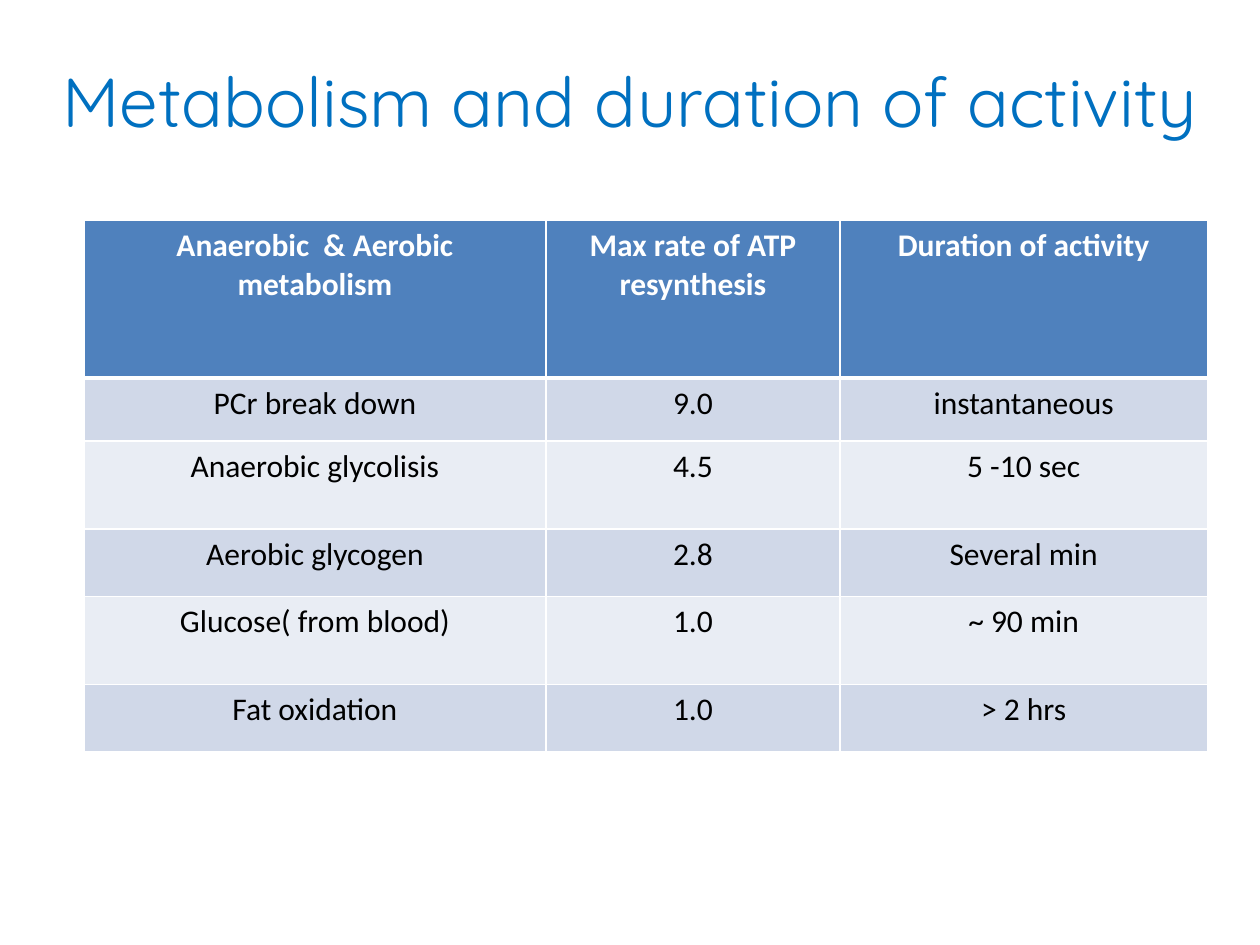
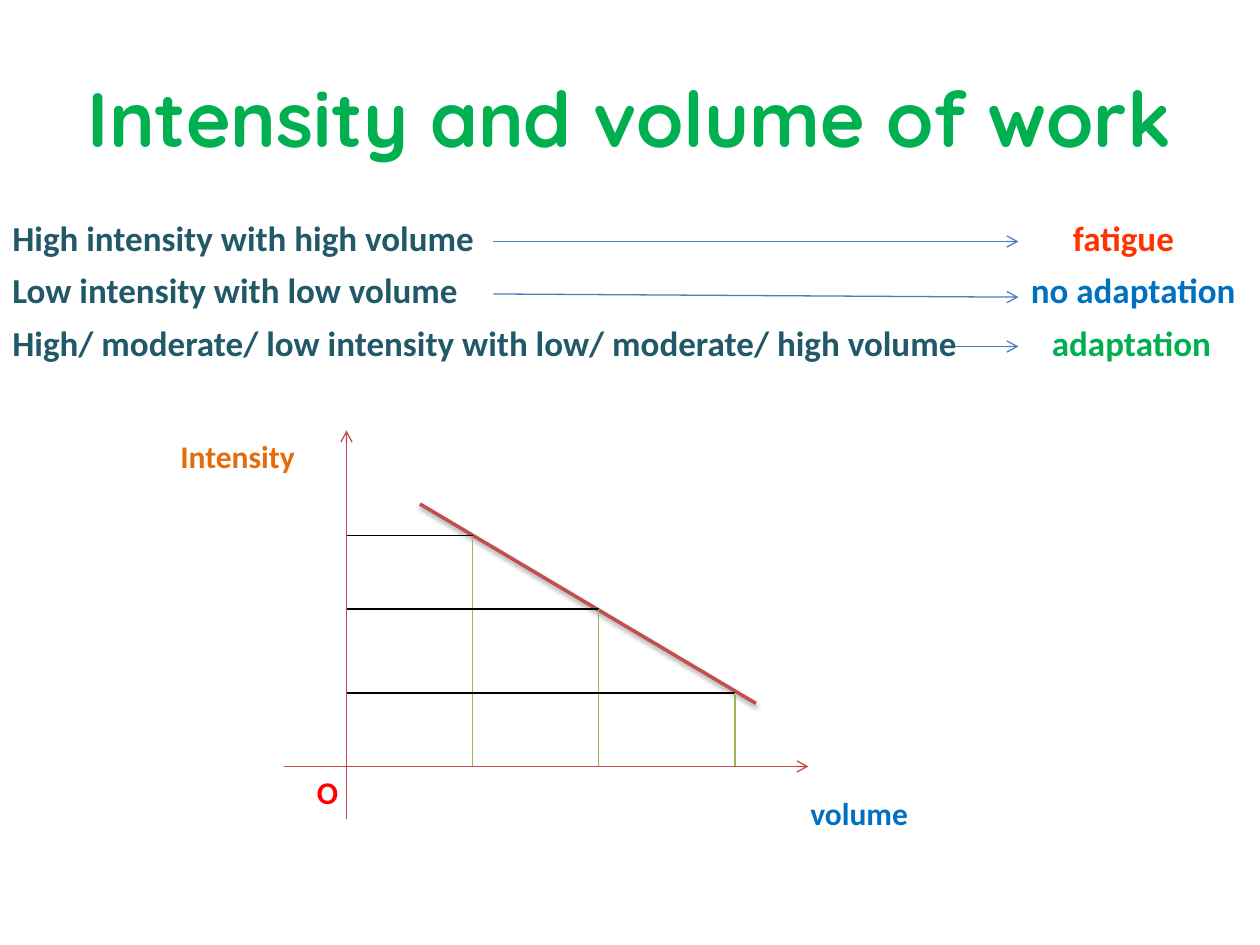
from collections import namedtuple

from lxml import etree
from pptx import Presentation
from pptx.dml.color import RGBColor
from pptx.enum import shapes, text
from pptx.oxml import ns
from pptx import util as u

CELL = u.Inches(1) / 12
TITLE_FONT, BODY_FONT = "Quicksand", "Calibri"
WHITE = RGBColor(0xFF, 0xFF, 0xFF)
BLACK = RGBColor(0x00, 0x00, 0x00)
BLUE = RGBColor(0x00, 0x70, 0xC0)
GREEN = RGBColor(0x00, 0xB0, 0x50)
TEAL = RGBColor(0x21, 0x59, 0x68)
ORANGE_RED = RGBColor(0xFF, 0x33, 0x00)
RED = RGBColor(0xFF, 0x00, 0x00)
ORANGE = RGBColor(0xE4, 0x6C, 0x0A)
HEADER_BLUE = RGBColor(0x4F, 0x81, 0xBD)
BAND_DARK = RGBColor(0xD0, 0xD8, 0xE8)
BAND_LIGHT = RGBColor(0xE9, 0xED, 0xF4)
ARROW_BLUE = RGBColor(0x4B, 0x7E, 0xBC)
AXIS_RED = RGBColor(0xBF, 0x4C, 0x48)
TREND_RED = RGBColor(0xC0, 0x50, 0x4D)
DROP_GREEN = RGBColor(0x98, 0xB9, 0x55)

Box = namedtuple("Box", "left top width height")

METABOLISM = [
    ("Anaerobic  & Aerobic metabolism", "Max rate of ATP resynthesis", "Duration of activity"),
    ("PCr break down", "9.0", "instantaneous"),
    ("Anaerobic glycolisis", "4.5", "5 -10 sec"),
    ("Aerobic glycogen", "2.8", "Several min"),
    ("Glucose( from blood)", "1.0", "~ 90 min"),
    ("Fat oxidation", "1.0", "> 2 hrs"),
]
METABOLISM_COLUMNS = (44, 28, 35)
METABOLISM_ROWS = (15, 6, 8.4, 6.4, 8.4, 6.4)

Outcome = namedtuple("Outcome", "work work_width arrow_start arrow_drop verdict verdict_left verdict_width color")
OUTCOMES = [
    Outcome("High intensity with high volume", 47.5, 47, 0, "fatigue", 101, 12, ORANGE_RED),
    Outcome("Low intensity with low volume", 47.5, 47, 0.3, "no adaptation", 97, 23, BLUE),
    Outcome("High/ moderate/ low intensity with low/ moderate/ high volume", 95, 91, 0,
            "adaptation", 99, 18, GREEN),
]


def cells(*counts):
    return [round(count * CELL) for count in counts]


def write(frame, words, size=18, color=BLACK, bold=False, font=BODY_FONT, align=text.PP_ALIGN.LEFT):
    paragraph = frame.paragraphs[0]
    paragraph.alignment = align
    run = paragraph.add_run()
    run.text = words
    run.font.name, run.font.size, run.font.bold = font, u.Pt(size), bold
    run.font.color.rgb = color


def add_label(slide, box, words, wrap=True, **style):
    frame = slide.shapes.add_textbox(*cells(*box)).text_frame
    frame.word_wrap = wrap
    write(frame, words, bold=True, **style)


def add_title(slide, box, words, **style):
    title = slide.shapes.title
    title.left, title.top, title.width, title.height = cells(*box)
    title.text_frame.auto_size = text.MSO_AUTO_SIZE.NONE
    title.text_frame.vertical_anchor = text.MSO_ANCHOR.MIDDLE
    write(title.text_frame, words, font=TITLE_FONT, align=text.PP_ALIGN.CENTER, **style)


def add_line(slide, start, end, color, width=0.75, arrow=False, shadow=False):
    line = slide.shapes.add_connector(shapes.MSO_CONNECTOR.STRAIGHT, *cells(*start, *end))
    line.line.color.rgb = color
    line.line.width = u.Pt(width)
    if arrow:
        etree.SubElement(line.line._get_or_add_ln(), ns.qn("a:tailEnd"), type="arrow")
    effects = etree.SubElement(line._element.spPr, ns.qn("a:effectLst"))
    if shadow:
        cast = etree.SubElement(effects, ns.qn("a:outerShdw"), blurRad=str(u.Pt(3.1)),
                                dist=str(u.Pt(1.6)), dir="5400000", rotWithShape="0")
        tint = etree.SubElement(cast, ns.qn("a:srgbClr"), val=str(BLACK))
        etree.SubElement(tint, ns.qn("a:alpha"), val="38000")


def set_borders(cell, **widths):
    properties = cell._tc.get_or_add_tcPr()
    for position, side in enumerate("LRTB"):
        border = etree.Element(ns.qn(f"a:ln{side}"), w=str(u.Pt(widths.get(side, 1))))
        fill = etree.SubElement(border, ns.qn("a:solidFill"))
        etree.SubElement(fill, ns.qn("a:srgbClr"), val=str(WHITE))
        properties.insert(position, border)


def add_metabolism_table(slide, box):
    table = slide.shapes.add_table(len(METABOLISM), len(METABOLISM_COLUMNS), *cells(*box)).table
    for column, width in zip(table.columns, cells(*METABOLISM_COLUMNS)):
        column.width = width
    for row, height in zip(table.rows, cells(*METABOLISM_ROWS)):
        row.height = height
    for r, entries in enumerate(METABOLISM):
        header = r == 0
        band = HEADER_BLUE if header else (BAND_LIGHT, BAND_DARK)[r % 2]
        for c, entry in enumerate(entries):
            cell = table.cell(r, c)
            cell.fill.solid()
            cell.fill.fore_color.rgb = band
            set_borders(cell, B=3 if header else 1, T=3 if r == 1 else 1)
            write(cell.text_frame, entry, color=WHITE if header else BLACK, bold=header,
                  align=text.PP_ALIGN.CENTER)


def add_outcomes(slide, box):
    step = box.height / len(OUTCOMES)
    arrow_end = box.left + 97
    for index, outcome in enumerate(OUTCOMES):
        top = box.top + index * step
        add_label(slide, Box(box.left, top, outcome.work_width, 5.3), outcome.work, size=20, color=TEAL)
        add_line(slide, (box.left + outcome.arrow_start, top + 3),
                 (arrow_end, top + 3 + outcome.arrow_drop), ARROW_BLUE, arrow=True)
        add_label(slide, Box(box.left + outcome.verdict_left, top, outcome.verdict_width, 5.3),
                  outcome.verdict, size=20, color=outcome.color)


def add_intensity_graph(slide, box):
    left, top, width, height = box
    origin_x, origin_y = left + 6, top + height - 5
    add_line(slide, (origin_x, top + height), (origin_x, top), AXIS_RED, arrow=True)
    add_line(slide, (left, origin_y), (left + width, origin_y), AXIS_RED, arrow=True)
    add_line(slide, (left + 13, top + 7), (left + 45, top + 26), TREND_RED, width=2, shadow=True)
    for volume, intensity in ((12, 22), (24, 15), (37, 7)):
        x, y = origin_x + volume, origin_y - intensity
        add_line(slide, (origin_x, y), (x, y), BLACK)
        add_line(slide, (x, y), (x, origin_y), DROP_GREEN)
    add_label(slide, Box(left - 11, top, 13.4, 4.8), "Intensity", wrap=False, color=ORANGE)
    add_label(slide, Box(left + width - 1, top + 34, 11.8, 4.8), "volume", wrap=False, color=BLUE)
    add_label(slide, Box(origin_x - 4, origin_y, 4.4, 4.8), "O", wrap=False, color=RED)


def build_metabolism_slide(slide):
    add_title(slide, Box(0, 3, 120, 13), "Metabolism and duration of activity", size=39.6, color=BLUE)
    add_metabolism_table(slide, Box(8, 21, sum(METABOLISM_COLUMNS), sum(METABOLISM_ROWS)))


def build_intensity_slide(slide):
    add_title(slide, Box(6, 3.6, 108, 15), "Intensity and volume of work", size=44, color=GREEN, bold=True)
    add_outcomes(slide, Box(0, 20, 120, 15))
    add_intensity_graph(slide, Box(27, 41, 50, 37))


def main():
    deck = Presentation()
    deck.slide_width, deck.slide_height = cells(120, 90)
    title_only = deck.slide_layouts[5]
    for build in (build_metabolism_slide, build_intensity_slide):
        build(deck.slides.add_slide(title_only))
    deck.save("out.pptx")


if __name__ == "__main__":
    main()
